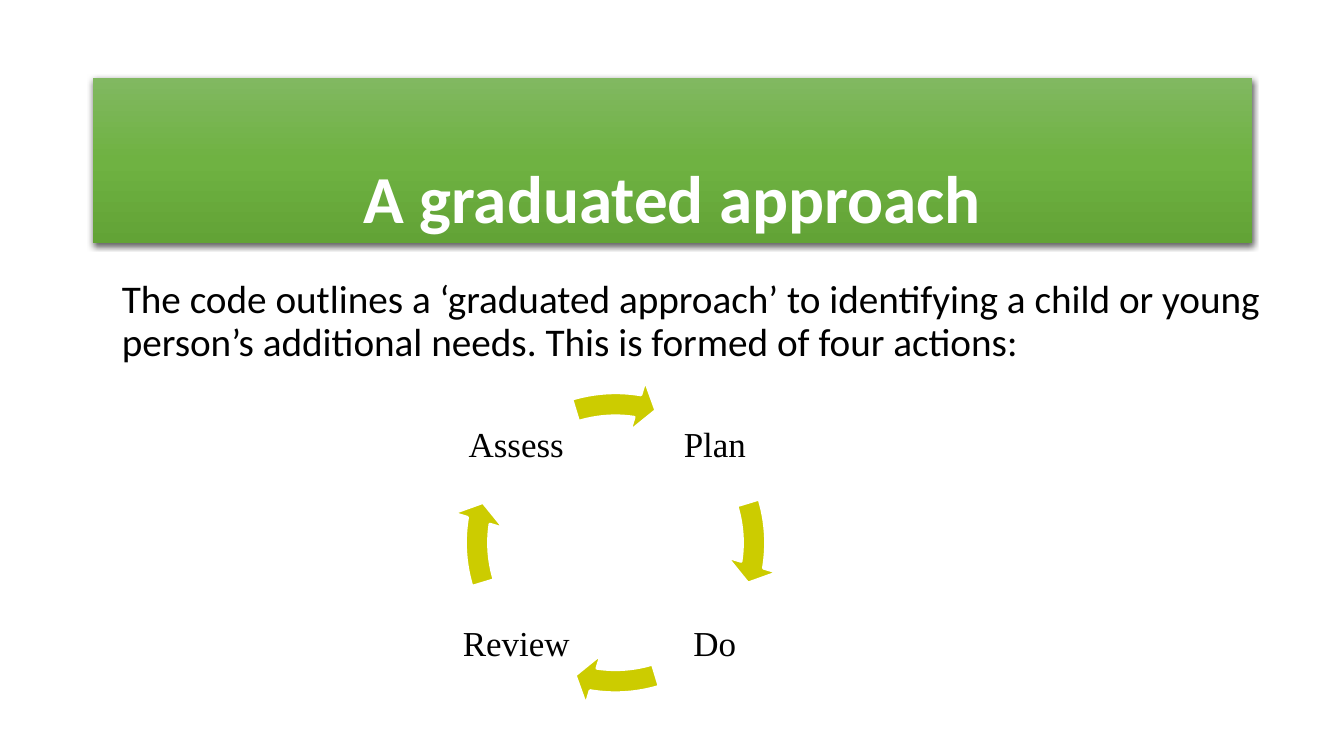
from lxml import etree
from pptx import Presentation
from pptx.dml.color import RGBColor
from pptx.enum.shapes import MSO_SHAPE
from pptx.enum.text import MSO_ANCHOR, MSO_AUTO_SIZE, PP_ALIGN
from pptx.oxml import parse_xml
from pptx.oxml.ns import nsdecls, qn
from pptx.util import Inches, Pt

CIRCULAR_ARROW = MSO_SHAPE.CIRCULAR_ARROW
TOP, MIDDLE, BOTTOM = MSO_ANCHOR.TOP, MSO_ANCHOR.MIDDLE, MSO_ANCHOR.BOTTOM
NO_AUTOFIT = MSO_AUTO_SIZE.NONE
LEFT, CENTER = PP_ALIGN.LEFT, PP_ALIGN.CENTER

BLACK = RGBColor(0x00, 0x00, 0x00)
WHITE = RGBColor(0xFF, 0xFF, 0xFF)
OLIVE = RGBColor(0xCC, 0xCC, 0x00)
BANNER_STOPS = (
    (0, RGBColor(0x81, 0xB8, 0x61)),
    (50, RGBColor(0x6F, 0xB2, 0x42)),
    (100, RGBColor(0x62, 0xA3, 0x36)),
)

CYCLE_LEFT, CYCLE_TOP, CYCLE_SIZE = 4.47, 3.75, 3.27
LABEL_LEFT, LABEL_TOP, LABEL_SIZE, LABEL_STEP = 4.54, 3.82, 1.16, 1.97
FULL_TURN = 216
QUARTER_TURN = FULL_TURN / 4
ACTIONS = (("Plan", 1, 0), ("Do", 1, 1), ("Review", 0, 1), ("Assess", 0, 0))


class SlideBuilder:
    title_font = {"name": "Calibri", "size": Pt(48), "bold": True}
    body_font = {"name": "Calibri", "size": Pt(28)}
    label_font = {"name": "Times New Roman", "size": Pt(25)}

    def __init__(self, deck):
        self.slide = deck.slides.add_slide(deck.slide_layouts[5])
        self.cycle = None

    def apply(self, target, values):
        for name, value in values.items():
            setattr(target, name, value)

    def fill_text(self, box, text, font, color, frame_format, para_format):
        frame = box.text_frame
        self.apply(frame, {"word_wrap": True, "auto_size": NO_AUTOFIT, **frame_format})
        para = frame.paragraphs[0]
        self.apply(para, para_format)
        span = para.add_run()
        span.text = text
        self.apply(span.font, font)
        span.font.color.rgb = color

    def title(self, text, left, top, width, height):
        banner = self.slide.shapes.title
        self.apply(banner, {"left": Inches(left), "top": Inches(top),
                            "width": Inches(width), "height": Inches(height)})
        stops = "".join(
            f'<a:gs pos="{position * 1000}"><a:srgbClr val="{color}"/></a:gs>'
            for position, color in BANNER_STOPS)
        properties = banner.element.spPr
        properties.append(parse_xml(
            f'<a:gradFill {nsdecls("a")} rotWithShape="1"><a:gsLst>{stops}</a:gsLst>'
            '<a:lin ang="5400000" scaled="0"/></a:gradFill>'))
        effects = etree.SubElement(properties, qn("a:effectLst"))
        effects.append(parse_xml(
            f'<a:outerShdw {nsdecls("a")} blurRad="{Pt(4.5)}" dist="{Pt(1.5)}" '
            'dir="5400000" algn="ctr" rotWithShape="0"><a:srgbClr val="000000">'
            '<a:alpha val="63000"/></a:srgbClr></a:outerShdw>'))
        self.fill_text(banner, text, self.title_font, WHITE, {"vertical_anchor": BOTTOM},
                       {"alignment": CENTER, "line_spacing": 0.9})

    def body(self, text, left, top, width, height):
        box = self.slide.shapes.add_textbox(
            Inches(left), Inches(top), Inches(width), Inches(height))
        self.fill_text(box, text, self.body_font, BLACK, {"vertical_anchor": TOP},
                       {"alignment": LEFT, "line_spacing": 0.9, "space_before": Pt(10)})

    def start_cycle(self):
        self.cycle = self.slide.shapes.add_group_shape()

    def label(self, text, column, row):
        box = self.cycle.shapes.add_textbox(
            Inches(LABEL_LEFT + column * LABEL_STEP), Inches(LABEL_TOP + row * LABEL_STEP),
            Inches(LABEL_SIZE), Inches(LABEL_SIZE))
        margins = dict.fromkeys(
            ("margin_left", "margin_top", "margin_right", "margin_bottom"), Inches(0.03))
        self.fill_text(box, text, self.label_font, BLACK,
                       {"vertical_anchor": MIDDLE, **margins}, {"alignment": CENTER})

    def arrow(self, turn):
        arrow = self.cycle.shapes.add_shape(
            CIRCULAR_ARROW, Inches(CYCLE_LEFT), Inches(CYCLE_TOP),
            Inches(CYCLE_SIZE), Inches(CYCLE_SIZE))
        head_angle = 5.49 + turn * QUARTER_TURN
        tail_angle = (205.86 + turn * QUARTER_TURN) % FULL_TURN
        for index, value in enumerate((0.07, 4.65, head_angle, tail_angle, 0.08)):
            arrow.adjustments[index] = value
        arrow.shadow.inherit = False
        arrow.fill.solid()
        arrow.fill.fore_color.rgb = OLIVE
        arrow.line.color.rgb = WHITE
        arrow.line.width = Pt(2)


def main():
    deck = Presentation()
    deck.slide_width, deck.slide_height = Inches(13.33), Inches(7.5)
    page = SlideBuilder(deck)
    page.title("A graduated approach", 0.92, 0.77, 11.5, 1.64)
    page.body("The code outlines a ‘graduated approach’ to identifying a child or young "
              "person’s additional needs. This is formed of four actions:",
              1.11, 2.73, 11.5, 4.53)
    page.start_cycle()
    for turn, (action, column, row) in enumerate(ACTIONS):
        page.label(action, column, row)
        page.arrow(turn)
    deck.save("out.pptx")


if __name__ == "__main__":
    main()
